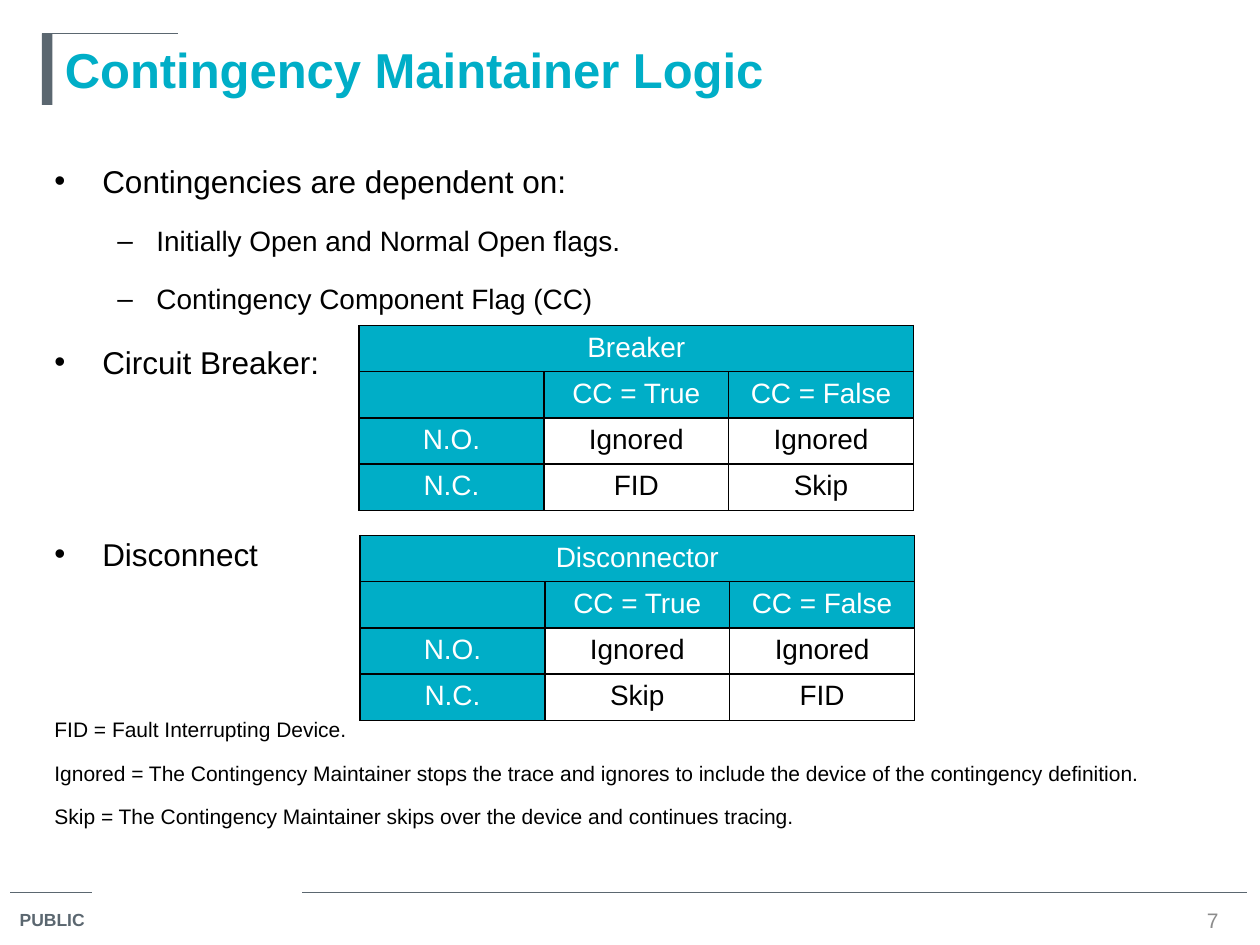
"""Build the Contingency Maintainer Logic slide on a grid of 120 columns by 90 rows."""
from lxml.etree import SubElement
from pptx import Presentation
from pptx.dml.color import RGBColor
from pptx.enum.shapes import MSO_CONNECTOR as LINE, MSO_SHAPE as SHAPE
from pptx.enum.text import MSO_ANCHOR as ANCHOR, PP_ALIGN as ALIGN
from pptx.oxml.ns import qn
from pptx.util import Inches, Pt

COLORS = {"teal": "00AEC7", "slate": "5B6770", "grey": "8C8C8C", "black": "000000", "white": "FFFFFF"}
COLUMNS, ROWS = 120, 90

deck = Presentation()
deck.slide_width, deck.slide_height = Inches(10), Inches(7.5)
slide = deck.slides.add_slide(deck.slide_layouts[6])
shapes = slide.shapes


def grid(x, y, *size):
    spans = zip((x, y, *size), (COLUMNS, ROWS) * 2)
    extents = (deck.slide_width, deck.slide_height) * 2
    return [round(extent * cells / total) for extent, (cells, total) in zip(extents, spans)]


def write(paragraph, text, size, color, bold=False):
    run = paragraph.add_run()
    run.text = text
    run.font.name, run.font.size, run.font.bold = "Arial", Pt(size), bold
    run.font.color.rgb = RGBColor.from_string(COLORS[color])


for left, right, row in [(1, 8.8, 85), (28.8, 118.8, 85), (4, 17, 3.2)]:
    rule = shapes.add_connector(LINE.STRAIGHT, *grid(left, row), *grid(right, row))
    rule.line.color.rgb = RGBColor.from_string(COLORS["slate"])
    rule.line.width = Pt(0.75)
    SubElement(rule._element.spPr, qn("a:effectLst"))

accent = shapes.add_shape(SHAPE.RECTANGLE, *grid(4, 3.2, 1, 6.8))
accent.shadow.inherit = False
accent.fill.solid()
accent.fill.fore_color.rgb = RGBColor.from_string(COLORS["slate"])
accent.line.fill.background()

labels = [
    ((0.7, 86, 9.3, 3.4), "PUBLIC", 10, "slate", True, ALIGN.LEFT, ANCHOR.TOP),
    ((5, 3.2, 111, 9.8), "Contingency Maintainer Logic", 28, "teal", True, ALIGN.LEFT, ANCHOR.TOP),
    ((112, 86.2, 7, 2.9), "7", 12, "grey", False, ALIGN.CENTER, ANCHOR.MIDDLE),
]
for place, text, size, color, bold, align, anchor in labels:
    frame = shapes.add_textbox(*grid(*place)).text_frame
    frame.word_wrap, frame.vertical_anchor = True, anchor
    frame.paragraphs[0].alignment = align
    write(frame.paragraphs[0], text, size, color, bold)

LEVELS = {"•": (0, 0.38, -0.38), "–": (1, 0.81, -0.31)}
points = [
    ("•", "Contingencies are dependent on:", 18, 0),
    ("–", "Initially Open and Normal Open flags.", 16, 4.4),
    ("–", "Contingency Component Flag (CC)", 16, 4.4),
    ("•", "Circuit Breaker:", 18, 5),
    ("•", "Disconnect", 18, 77),
    (None, "FID = Fault Interrupting Device.", 12, 75.3),
    (None, "Ignored = The Contingency Maintainer stops the trace and ignores to include the device "
           "of the contingency definition.", 12, 3.3),
    (None, "Skip = The Contingency Maintainer skips over the device and continues tracing.", 12, 3.3),
]
body = shapes.add_textbox(*grid(4, 13, 112, 64)).text_frame
body.word_wrap = True
for index, (bullet, text, size, gap) in enumerate(points):
    point = body.add_paragraph() if index else body.paragraphs[0]
    if bullet:
        point.level, margin, indent = LEVELS[bullet]
        properties = point._p.get_or_add_pPr()
        properties.set("marL", str(Inches(margin)))
        properties.set("indent", str(Inches(indent)))
        SubElement(properties, qn("a:buFont"), typeface="Arial")
        SubElement(properties, qn("a:buChar"), char=bullet)
    point.line_spacing, point.space_before = 1.5, Pt(gap)
    write(point, text, size, "black")

devices = [
    ("Breaker", 34.2, 31, ("FID", "Skip")),
    ("Disconnector", 34.3, 51, ("Skip", "FID")),
]
for device, left, top, closed in devices:
    logic = [
        (device, "", ""),
        ("", "CC = True", "CC = False"),
        ("N.O.", "Ignored", "Ignored"),
        ("N.C.", *closed),
    ]
    table = shapes.add_table(4, 3, *grid(left, top, 52.8, 17.5)).table
    table.first_row = table.horz_banding = False
    table.cell(0, 0).merge(table.cell(0, 2))
    for r, words in enumerate(logic):
        for c, word in enumerate(words):
            cell = table.cell(r, c)
            heading = r < 2 or c == 0
            for side in ("lnL", "lnR", "lnT", "lnB"):
                border = SubElement(cell._tc.get_or_add_tcPr(), qn(f"a:{side}"), w=str(Pt(1)))
                paint = SubElement(border, qn("a:solidFill"))
                SubElement(paint, qn("a:srgbClr"), val=COLORS["black"])
            cell.fill.solid()
            cell.fill.fore_color.rgb = RGBColor.from_string(COLORS["teal" if heading else "white"])
            entry = cell.text_frame.paragraphs[0]
            entry.alignment = ALIGN.CENTER
            if word:
                write(entry, word, 16, "white" if heading else "black")
            SubElement(entry._p, qn("a:endParaRPr"), sz="1600")

deck.save("out.pptx")
